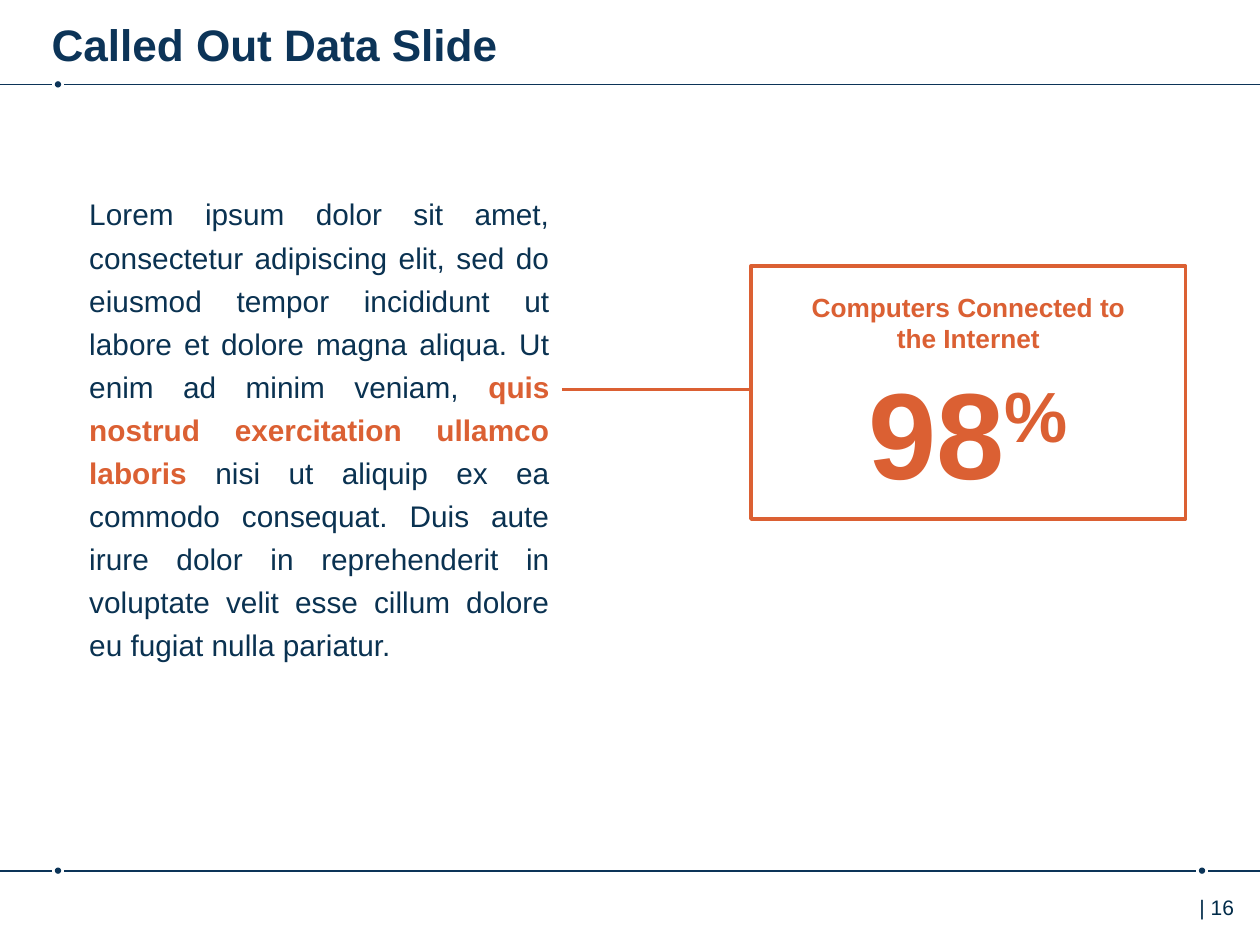
from lxml.etree import SubElement
from pptx import Presentation
from pptx.dml.color import RGBColor
from pptx.enum.shapes import MSO_CONNECTOR as Connector, MSO_SHAPE as Preset
from pptx.enum.text import MSO_ANCHOR as Anchor, PP_ALIGN as Align
from pptx.oxml.ns import qn
from pptx.util import Inches, Pt

FONT = "Arial"
COLORS = {
    "navy": "0C3458",
    "body": "0A3251",
    "number": "002B49",
    "accent": "DB6033",
    "white": "FFFFFF",
}


def color(name):
    return RGBColor.from_string(COLORS[name])


def add_text(slide, text, box, size, ink, bold=False, align=Align.LEFT,
             anchor=Anchor.TOP, spacing=None, insets=(0.1, 0.05, 0.1, 0.05)):
    """Add one paragraph; text is a string or a list of (text, ink, bold)."""
    shape = slide.shapes.add_textbox(*map(Inches, box))
    frame = shape.text_frame
    frame.word_wrap = True
    frame.vertical_anchor = anchor
    (frame.margin_left, frame.margin_top,
     frame.margin_right, frame.margin_bottom) = map(Inches, insets)
    paragraph = frame.paragraphs[0]
    paragraph.alignment = align
    if spacing:
        paragraph.line_spacing = Pt(spacing)
    runs = [(text, ink, bold)] if isinstance(text, str) else text
    for run_text, run_ink, run_bold in runs:
        run = paragraph.add_run()
        run.text = run_text
        run.font.name = FONT
        run.font.size = Pt(size)
        run.font.bold = run_bold
        run.font.color.rgb = color(run_ink)
    return shape


def add_line(slide, left, right, y, ink, width):
    line = slide.shapes.add_connector(
        Connector.STRAIGHT, Inches(left), Inches(y), Inches(right), Inches(y))
    line.line.color.rgb = color(ink)
    line.line.width = Pt(width)
    SubElement(line._element.spPr, qn("a:effectLst"))
    return line


def add_shape(slide, preset, box, fill, outline=None):
    shape = slide.shapes.add_shape(preset, *map(Inches, box))
    shape.shadow.inherit = False
    shape.fill.solid()
    shape.fill.fore_color.rgb = color(fill)
    if outline:
        shape.line.color.rgb = color(outline)
        shape.line.width = Pt(2)
    else:
        shape.line.fill.background()
    return shape


def add_dotted_rule(slide, left, y, width, dots):
    """Draw a horizontal rule that is broken around each dot."""
    size, gap = 0.05, 0.05
    start = left
    for x in dots:
        add_line(slide, start, x - gap, y, "navy", 1)
        add_shape(slide, Preset.OVAL,
                  (x - size / 2, y - size / 2, size, size), "navy")
        start = x + gap
    add_line(slide, start, left + width, y, "navy", 1)


def add_header(slide, left, top, width, height):
    add_text(slide, "Called Out Data Slide",
             (left + 0.41, top + 0.05, 8.76, 0.49), 25.2, "navy", bold=True,
             insets=(0, 0.09, 0, 0))
    add_dotted_rule(slide, left, top + height, width, [left + 0.46])


def add_footer(slide, left, top, width):
    add_dotted_rule(slide, left, top, width, [left + 0.46, left + width - 0.46])
    add_text(slide, "| 16", (left + width - 0.71, top + 0.14, 0.87, 0.4),
             12, "number", insets=(0.23, 0.05, 0.1, 0.05))


def add_body(slide, box):
    add_text(slide, [
        ("Lorem ipsum dolor sit amet, consectetur adipiscing elit, sed do "
         "eiusmod tempor incididunt ut labore et dolore magna aliqua. Ut enim "
         "ad minim veniam, ", "body", False),
        ("quis nostrud exercitation ullamco laboris ", "accent", True),
        ("nisi ut aliquip ex ea commodo consequat. Duis aute irure dolor in "
         "reprehenderit in voluptate velit esse cillum dolore eu fugiat nulla "
         "pariatur.", "body", False),
    ], box, 17, "body", align=Align.JUSTIFY, spacing=24.6)


def add_callout(slide, left, top, width, height):
    add_shape(slide, Preset.RECTANGLE, (left, top, width, height),
              "white", "accent")
    # Large figure with a raised percent sign
    figure = add_text(slide, [("98", "accent", True), ("%", "accent", True)],
                      (left, top + 0.63, width, 1.31), 70, "accent",
                      align=Align.CENTER, anchor=Anchor.BOTTOM)
    percent = figure.text_frame.paragraphs[0].runs[1]
    percent.font._element.set("baseline", "30000")
    # Caption
    add_text(slide, "Computers Connected to the Internet",
             (left + 0.22, top + 0.15, width - 0.44, 0.61), 15, "accent",
             bold=True, align=Align.CENTER)


def main():
    presentation = Presentation()
    presentation.slide_width = Inches(10)
    presentation.slide_height = Inches(7.5)
    slide = presentation.slides.add_slide(presentation.slide_layouts[6])

    add_header(slide, 0, 0, 10, 0.67)
    add_footer(slide, 0, 6.91, 10)
    add_body(slide, (0.61, 1.45, 3.85, 3.96))
    # Leader from the highlighted words to the callout
    add_line(slide, 4.46, 5.96, 3.09, "accent", 2)
    add_callout(slide, 5.96, 2.11, 3.45, 2.01)

    presentation.save("out.pptx")


if __name__ == "__main__":
    main()
